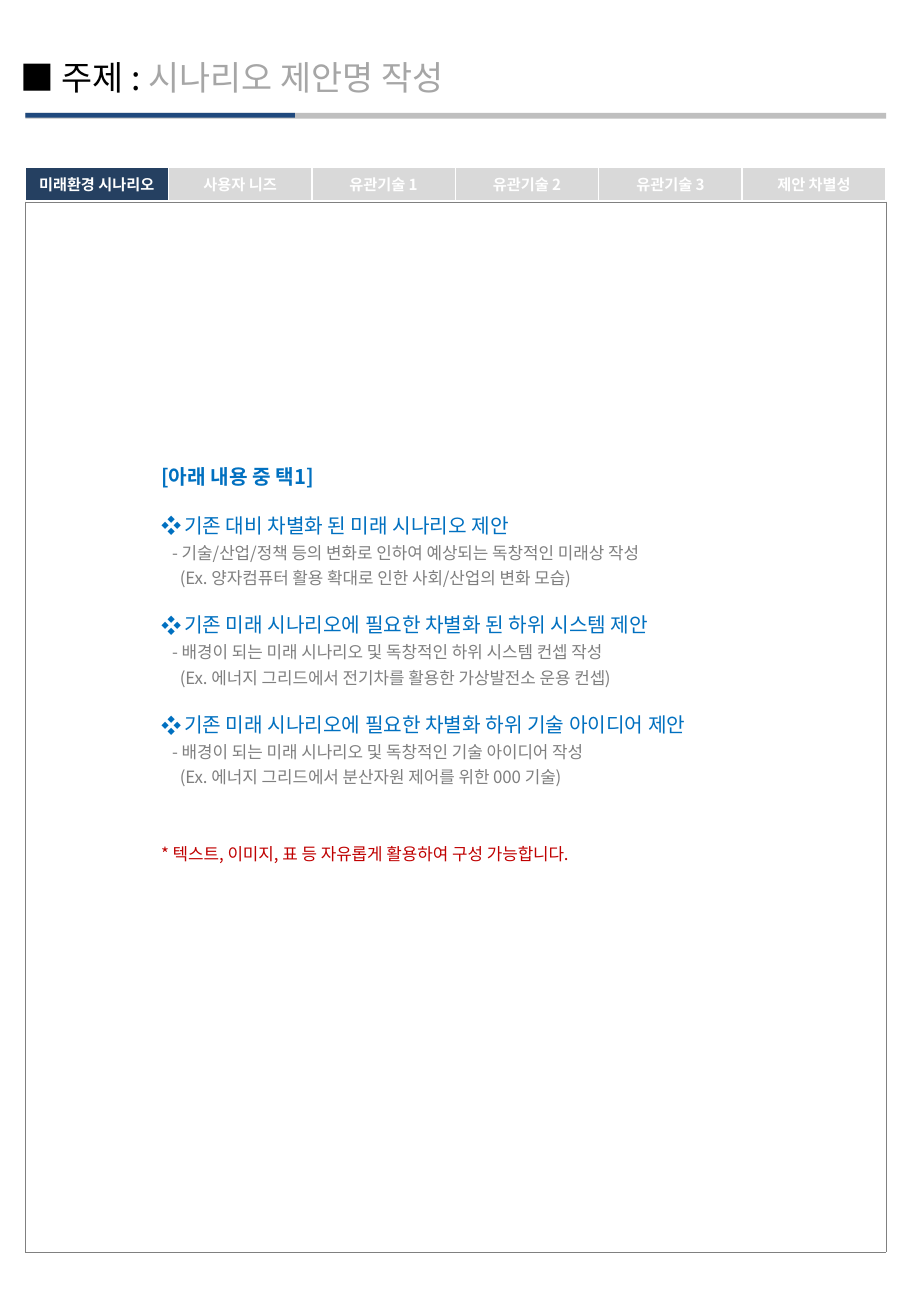
"""Build the future scenario proposal page with its title, section tabs and writing guide."""
from dataclasses import dataclass

from lxml.etree import SubElement
from pptx import Presentation
from pptx.dml.color import RGBColor
from pptx.enum.shapes import MSO_SHAPE
from pptx.enum.text import MSO_ANCHOR, PP_ALIGN
from pptx.oxml.ns import qn
from pptx.util import Cm, Pt


@dataclass(frozen=True)
class Theme:
    font: str = "Noto Sans CJK KR"
    black: str = "000000"
    white: str = "FFFFFF"
    hint: str = "A6A6A6"
    bar: str = "BFBFBF"
    accent: str = "1F497D"
    active_tab: str = "254061"
    idle_tab: str = "D9D9D9"
    frame: str = "808080"
    heading: str = "0070C0"
    detail: str = "7F7F7F"
    notice: str = "C00000"
    title_size: int = 20
    heading_size: int = 12
    detail_size: int = 10
    tab_size: int = 9


theme = Theme()


def write(paragraph, text, size, color, bold=False, before=0, line=None, indent=0, bullet=None):
    """Add a formatted run to a paragraph and set the paragraph's layout."""
    props = paragraph._p.get_or_add_pPr()
    if indent:
        props.set("marL", str(Cm(indent)))
    if bullet:
        props.set("indent", str(-Cm(indent)))
        SubElement(props, qn("a:buFont"), typeface=theme.font)
        SubElement(props, qn("a:buChar"), char=bullet)
    if before:
        paragraph.space_before = Pt(before)
    if line:
        paragraph.line_spacing = Pt(line)
    run = paragraph.add_run()
    run.text = text
    run.font.name = theme.font
    run.font.size = Pt(size)
    run.font.bold = bold
    run.font.color.rgb = RGBColor.from_string(color)
    SubElement(run._r.get_or_add_rPr(), qn("a:ea"), typeface=theme.font)


def draw_borders(cell, color, width):
    """Give a table cell the same line on all four sides."""
    for side in ("a:lnL", "a:lnR", "a:lnT", "a:lnB"):
        border = SubElement(cell._tc.get_or_add_tcPr(), qn(side), w=str(Pt(width)))
        fill = SubElement(border, qn("a:solidFill"))
        SubElement(fill, qn("a:srgbClr"), val=color)


deck = Presentation()
deck.slide_width, deck.slide_height = Cm(19.05), Cm(27.51)
page = deck.slides.add_slide(deck.slide_layouts[6])
left, width = 0.53, 18

for bar_width, bar_height, color in ((width, 0.12, theme.bar), (5.64, 0.1, theme.accent)):
    bar = page.shapes.add_shape(
        MSO_SHAPE.RECTANGLE, Cm(left), Cm(2.36), Cm(bar_width), Cm(bar_height))
    bar.shadow.inherit = False
    bar.fill.solid()
    bar.fill.fore_color.rgb = RGBColor.from_string(color)
    bar.line.fill.background()

title = page.shapes.add_textbox(Cm(0.18), Cm(1.04), Cm(18.14), Cm(1.12)).text_frame
title.word_wrap = True
title.vertical_anchor = MSO_ANCHOR.MIDDLE
title.margin_top = title.margin_bottom = 0
write(title.paragraphs[0], "■ 주제 : ", theme.title_size, theme.black)
write(title.paragraphs[0], "시나리오 제안명 작성", theme.title_size, theme.hint)

frame = page.shapes.add_table(1, 1, Cm(left), Cm(4.22), Cm(width), Cm(21.95)).table
frame.first_row = frame.horz_banding = False
draw_borders(frame.cell(0, 0), theme.frame, 0.25)
frame.cell(0, 0).fill.background()

options = (
    ("기존 대비 차별화 된 미래 시나리오 제안",
     "- 기술/산업/정책 등의 변화로 인하여 예상되는 독창적인 미래상 작성",
     "(Ex. 양자컴퓨터 활용 확대로 인한 사회/산업의 변화 모습)"),
    ("기존 미래 시나리오에 필요한 차별화 된 하위 시스템 제안",
     "- 배경이 되는 미래 시나리오 및 독창적인 하위 시스템 컨셉 작성",
     "(Ex. 에너지 그리드에서 전기차를 활용한 가상발전소 운용 컨셉)"),
    ("기존 미래 시나리오에 필요한 차별화 하위 기술 아이디어 제안",
     "- 배경이 되는 미래 시나리오 및 독창적인 기술 아이디어 작성",
     "(Ex. 에너지 그리드에서 분산자원 제어를 위한 000 기술)"),
)
heading_format = dict(size=theme.heading_size, color=theme.heading, line=14.5)
detail_format = dict(size=theme.detail_size, color=theme.detail, line=12, before=3)

guide = page.shapes.add_textbox(Cm(3.12), Cm(9.57), Cm(13.72), Cm(8.69)).text_frame
guide.word_wrap = True
write(guide.paragraphs[0], "[아래 내용 중 택1]", bold=True, **heading_format)
for proposal, task, example in options:
    write(guide.add_paragraph(), proposal, before=14.5, indent=0.48, bullet="❖", **heading_format)
    write(guide.add_paragraph(), task, indent=0.23, **detail_format)
    write(guide.add_paragraph(), example, indent=0.39, **detail_format)
write(guide.add_paragraph(), "* 텍스트, 이미지, 표 등 자유롭게 활용하여 구성 가능합니다.",
      theme.detail_size, theme.notice, before=33.3, line=12)

sections = ("미래환경 시나리오", "사용자 니즈", "유관기술 1", "유관기술 2", "유관기술 3", "제안 차별성")
tabs = page.shapes.add_table(1, len(sections), Cm(0.52), Cm(3.49), Cm(width), Cm(0.7)).table
tabs.first_row = tabs.horz_banding = False
for column, section in enumerate(sections):
    tab = tabs.cell(0, column)
    tab.margin_left = tab.margin_right = tab.margin_top = tab.margin_bottom = 0
    tab.vertical_anchor = MSO_ANCHOR.MIDDLE
    draw_borders(tab, theme.white, 1)
    tab.fill.solid()
    tab.fill.fore_color.rgb = RGBColor.from_string(
        theme.idle_tab if column else theme.active_tab)
    label = tab.text_frame.paragraphs[0]
    label.alignment = PP_ALIGN.CENTER
    write(label, section, theme.tab_size, theme.white, bold=True)

deck.save("out.pptx")
